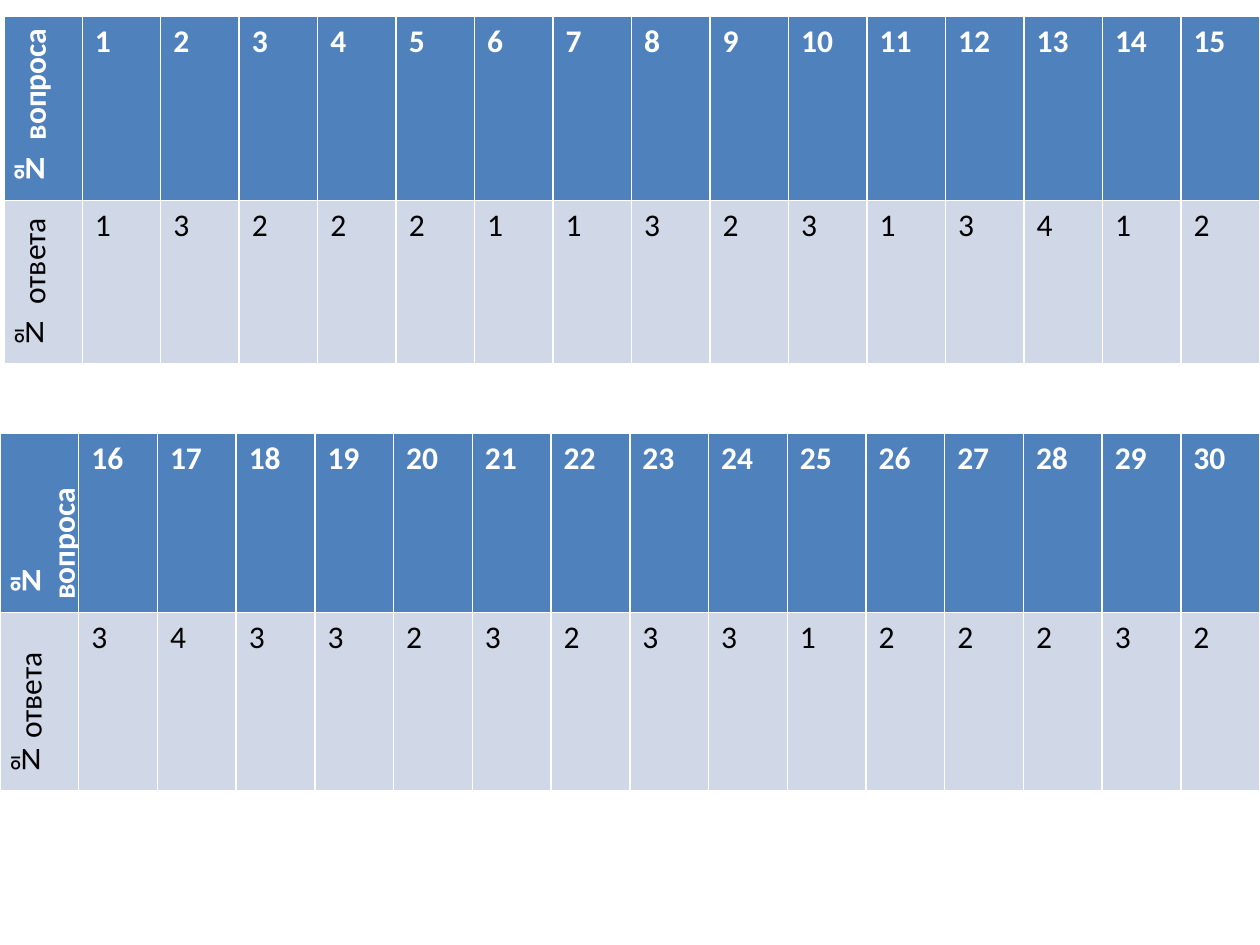
import pptx
import pptx.util
import pptx.dml.color

THEME = {
    "font": "Calibri",
    "size": 18,
    "header": {"fill": "4F81BD", "color": "FFFFFF", "bold": True},
    "body": {"fill": "D0D8E8", "color": "000000", "bold": False},
}
SLIDE_WIDTH, SLIDE_HEIGHT = 10, 7.5
ANSWER_TABLES = [
    {
        "labels": ("№ вопроса", "№ ответа"),
        "first_question": 1,
        "answers": (1, 3, 2, 2, 2, 1, 1, 3, 2, 3, 1, 3, 4, 1, 2),
        "left": 0.03,
        "top": 0.13,
        "row_heights": (1.46, 1.3),
    },
    {
        "labels": ("№ вопроса", "№ответа"),
        "first_question": 16,
        "answers": (3, 4, 3, 3, 2, 3, 2, 3, 3, 1, 2, 2, 2, 3, 2),
        "left": 0,
        "top": 3.44,
        "row_heights": (1.42, 1.42),
    },
]


def rgb(value):
    return pptx.dml.color.RGBColor.from_string(value)


def write_cell(cell, text, *, fill, color, bold, vertical=False):
    cell.fill.solid()
    cell.fill.fore_color.rgb = rgb(fill)
    run = cell.text_frame.paragraphs[0].add_run()
    run.text = text
    run.font.name = THEME["font"]
    run.font.size = pptx.util.Pt(THEME["size"])
    run.font.bold = bold
    run.font.color.rgb = rgb(color)
    if vertical:
        cell._tc.get_or_add_tcPr().set("vert", "vert270")


def add_answer_table(slide, content):
    answers = content["answers"]
    first = content["first_question"]
    questions = range(first, first + len(answers))
    rows = [(label, *values) for label, values in zip(content["labels"], (questions, answers))]
    width = SLIDE_WIDTH - content["left"]
    heights = content["row_heights"]
    table = slide.shapes.add_table(
        len(rows),
        len(rows[0]),
        pptx.util.Inches(content["left"]),
        pptx.util.Inches(content["top"]),
        pptx.util.Inches(width),
        pptx.util.Inches(sum(heights)),
    ).table
    for column in table.columns:
        column.width = pptx.util.Inches(width / len(rows[0]))
    for row_index, (values, height) in enumerate(zip(rows, heights)):
        table.rows[row_index].height = pptx.util.Inches(height)
        style = THEME["body" if row_index else "header"]
        for column_index, value in enumerate(values):
            write_cell(
                table.cell(row_index, column_index),
                str(value),
                vertical=column_index == 0,
                **style,
            )


def main():
    presentation = pptx.Presentation()
    presentation.slide_width = pptx.util.Inches(SLIDE_WIDTH)
    presentation.slide_height = pptx.util.Inches(SLIDE_HEIGHT)
    slide = presentation.slides.add_slide(presentation.slide_layouts[6])
    for content in ANSWER_TABLES:
        add_answer_table(slide, content)
    presentation.save("out.pptx")


if __name__ == "__main__":
    main()
